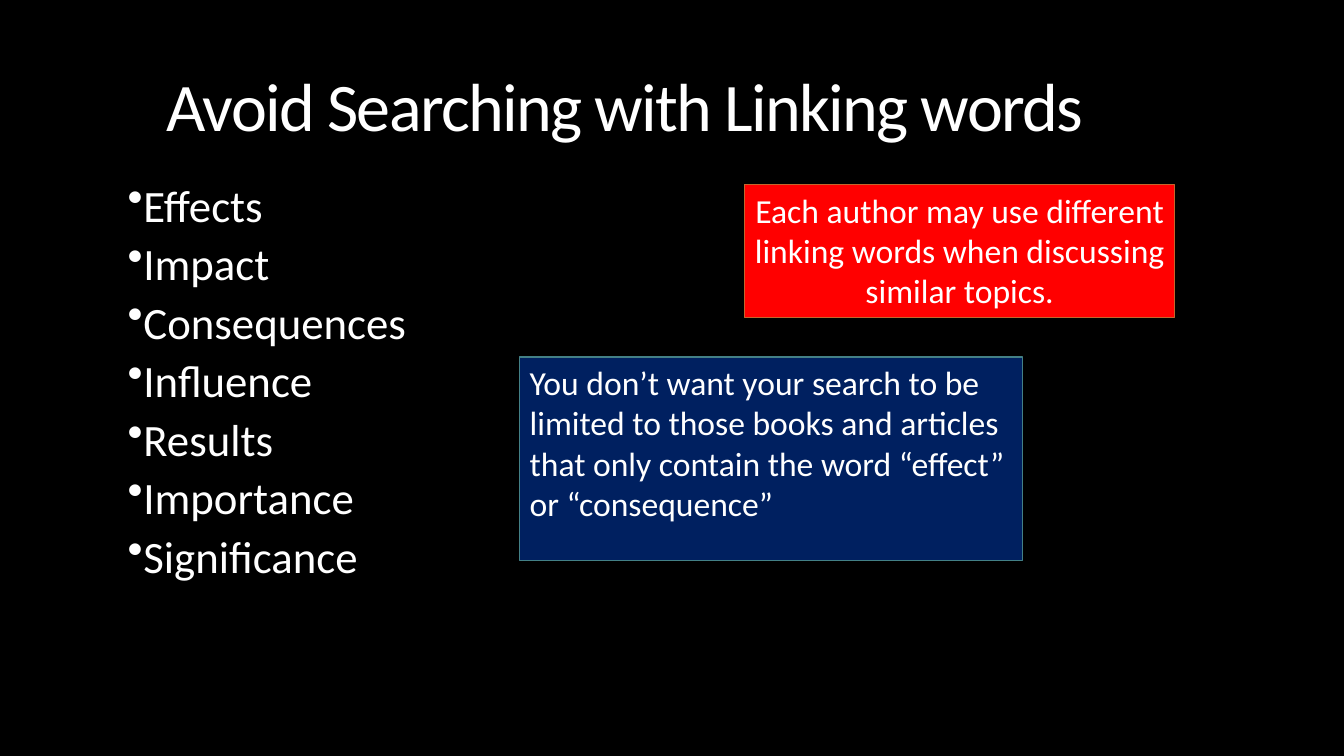
from lxml import etree
from pptx import Presentation, util as u
from pptx.dml.color import RGBColor
from pptx.enum import shapes, text
from pptx.oxml.ns import qn

PX = 9525  # EMU per px, 96 px to the inch
COLORS = {
    "background": "000000", "text": "FFFFFF",
    "red": "FF0000", "red_line": "C4652D",
    "navy": "002060", "navy_line": "438086",
}
LINKING_WORDS = ["Effects", "Impact", "Consequences", "Influence",
                 "Results", "Importance", "Significance"]


def rgb(name):
    return RGBColor.from_string(COLORS[name])


def emu(box):
    return [n * PX for n in box]


def set_attrs(obj, values):
    for name, value in values.items():
        setattr(obj, name, value)


def write(sp, lines, size, para, anchor=text.MSO_ANCHOR.TOP):
    """Fill a shape with one paragraph per line."""
    tf = sp.text_frame
    set_attrs(tf, {"word_wrap": True, "vertical_anchor": anchor,
                   "auto_size": text.MSO_AUTO_SIZE.NONE})
    for i, line in enumerate(lines):
        p = tf.add_paragraph() if i else tf.paragraphs[0]
        set_attrs(p, para)
        r = p.add_run()
        r.text = line
        set_attrs(r.font, {"name": "Calibri", "size": u.Pt(size)})
        r.font.color.rgb = rgb("text")
    return tf.paragraphs


def add_title(s, box, title):
    sp = s.shapes.add_textbox(*emu(box))
    para = {"alignment": text.PP_ALIGN.CENTER, "line_spacing": 0.85}
    for p in write(sp, [title], 48.6, para, text.MSO_ANCHOR.MIDDLE):
        p.runs[0].font._element.set("spc", "-120")


def add_bullets(s, box, words):
    sp = s.shapes.add_textbox(*emu(box))
    para = {"alignment": text.PP_ALIGN.LEFT, "line_spacing": 0.75,
            "space_before": u.Pt(13)}
    indent = 10 * PX
    for p in write(sp, words, 32, para):
        pPr = p._p.get_or_add_pPr()
        pPr.set("marL", str(indent))
        pPr.set("indent", str(-indent))
        etree.SubElement(pPr, qn("a:buChar")).set("char", "•")


def add_note(s, box, note, color, align):
    sp = s.shapes.add_shape(shapes.MSO_SHAPE.RECTANGLE, *emu(box))
    sp.shadow.inherit = False
    sp.fill.solid()
    sp.fill.fore_color.rgb = rgb(color)
    sp.line.color.rgb = rgb(color + "_line")
    sp.line.width = u.Pt(0.75)
    write(sp, [note], 24, {"alignment": align})


def main():
    prs = Presentation()
    set_attrs(prs, {"slide_width": 1280 * PX, "slide_height": 720 * PX})
    s = prs.slides.add_slide(prs.slide_layouts[6])
    s.background.fill.solid()
    s.background.fill.fore_color.rgb = rgb("background")

    # Title and word list
    add_title(s, (144, 36, 902, 138), "Avoid Searching with Linking words")
    add_bullets(s, (112, 176, 902, 407), LINKING_WORDS)

    # Notes
    add_note(s, (709, 176, 410, 126),
             "Each author may use different linking words when discussing "
             "similar topics.", "red", text.PP_ALIGN.CENTER)
    add_note(s, (495, 340, 479, 194),
             "You don’t want your search to be limited to those books and "
             "articles that only contain the word “effect” or “consequence”",
             "navy", text.PP_ALIGN.LEFT)
    prs.save("out.pptx")


if __name__ == "__main__":
    main()
